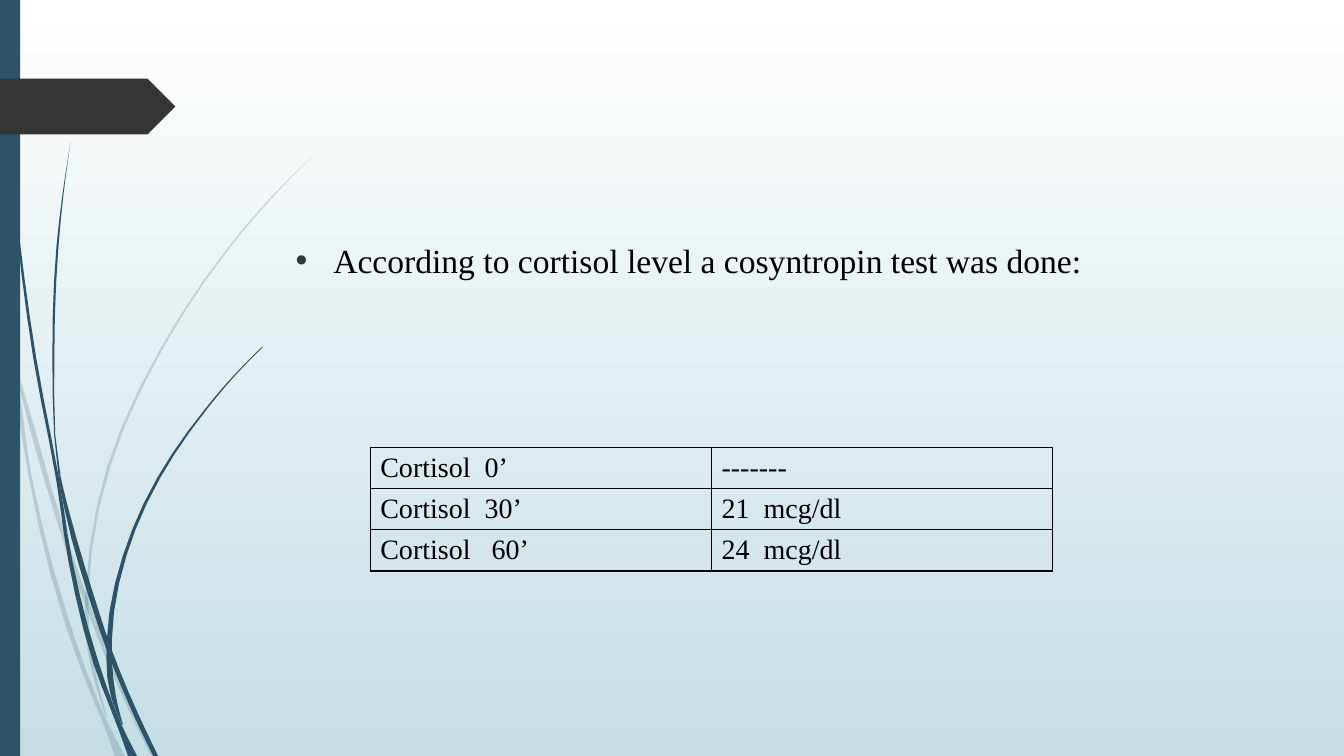
from lxml.etree import SubElement
from pptx import Presentation
from pptx.dml.color import RGBColor
from pptx.enum.shapes import MSO_SHAPE
from pptx.oxml.ns import qn
from pptx.util import Cm, Pt

WHITE = RGBColor(0xFF, 0xFF, 0xFF)
BLACK = RGBColor(0x00, 0x00, 0x00)
PALE_TEAL = RGBColor(0xC5, 0xDE, 0xE5)
DEEP_BLUE = RGBColor(0x2E, 0x53, 0x69)
CHARCOAL = RGBColor(0x35, 0x35, 0x35)
FONT = "Times New Roman"

# Grass blades: rows of (y, left edge, right edge), in units of GRID,
# with the indexes of the rows where a blade is divided into segments
GRID = Cm(0.0254)
CURVE_STEPS = 3
PALE_BLADES = [
    ([(282, 0, 0), (299, 0, 4), (350, 11, 11.5), (376, 17, 20), (522, 58, 62.5),
      (599, 84, 89), (694, 123, 128), (750, 150, 155)], (2, 5)),
    ([(350, 11, 11), (376, 14, 17), (470, 28, 31), (620, 65, 70),
      (693, 92, 96.5), (714, 101, 105.5), (750, 114, 124)], (5,)),
    ([(153, 312, 312), (197, 267.5, 269.5), (244, 227.5, 229.5),
      (348, 158, 160.5), (461, 107, 110), (586, 85, 88), (610, 84, 88),
      (646, 87, 91), (711, 105, 106)], (5, 6)),
]
DARK_BLADES = [
    ([(0, 3, 4), (110, 7, 8), (233, 17, 19), (355, 33, 36), (477, 56, 59),
      (557, 68, 72), (659, 93, 98.5), (722, 117, 122), (750, 127, 136)], (4, 7)),
    ([(141, 70, 70), (193, 62, 63), (245, 56, 58), (349, 52, 54),
      (472, 58, 60), (505, 64, 68), (592, 88, 93.5), (645, 106, 111),
      (708, 132, 137), (750, 152, 157)], (4, 7)),
    ([(344, 260, 261), (374, 230.5, 232), (405, 204, 206), (474, 156, 159),
      (551, 122, 125.5), (635, 106, 111), (691, 110, 115),
      (719, 121, 122)], (5,)),
]

CORTISOL_ROWS = [
    ("Cortisol  0’", "-------"),
    ("Cortisol  30’", "21  mcg/dl"),
    ("Cortisol   60’", "24  mcg/dl"),
]


def paint(shape, color):
    shape.shadow.inherit = False
    shape.fill.solid()
    shape.fill.fore_color.rgb = color
    shape.line.fill.background()


def format_runs(paragraph, size):
    for run in paragraph.runs:
        run.font.name = FONT
        run.font.size = Pt(size)
        run.font.color.rgb = BLACK


def smooth_edge(heights, edge):
    """Cubic curve of (x, y) points through one edge of a blade."""
    gaps = [b - a for a, b in zip(heights, heights[1:])]
    secants = [(b - a) / gap for a, b, gap in zip(edge, edge[1:], gaps)]
    inner = [(g * t + h * s) / (g + h)
             for g, h, s, t in zip(gaps, gaps[1:], secants, secants[1:])]
    slopes = [(3 * secants[0] - inner[0]) / 2, *inner,
              (3 * secants[-1] - inner[-1]) / 2]
    points = []
    for i, gap in enumerate(gaps):
        for step in range(CURVE_STEPS):
            t = step / CURVE_STEPS
            blend = t * t * (3 - 2 * t)
            x = (edge[i] + (edge[i + 1] - edge[i]) * blend
                 + gap * t * (1 - t) * ((1 - t) * slopes[i] - t * slopes[i + 1]))
            points.append((x, heights[i] + gap * t))
    return points + [(edge[-1], heights[-1])]


def add_blade(slide, rows, cuts, left, top, opacity):
    heights, left_edge, right_edge = zip(*rows)
    left_curve = smooth_edge(heights, left_edge)
    right_curve = smooth_edge(heights, right_edge)
    bounds = [0, *cuts, len(rows) - 1]
    for first, last in zip(bounds, bounds[1:]):
        span = slice(first * CURVE_STEPS, last * CURVE_STEPS + 1)
        outline = left_curve[span] + right_curve[span][::-1]
        points = [(left + x * GRID, top + y * GRID) for x, y in outline]
        builder = slide.shapes.build_freeform(*points[0])
        builder.add_line_segments(points[1:])
        segment = builder.convert_to_shape()
        paint(segment, DEEP_BLUE)
        if opacity < 100:
            color = segment.fill._xPr.find(".//" + qn("a:srgbClr"))
            SubElement(color, qn("a:alpha"), val=str(opacity * 1000))


def add_decoration(slide, left, top, height):
    # Grass
    for blades, opacity in ((PALE_BLADES, 20), (DARK_BLADES, 100)):
        for rows, cuts in blades:
            add_blade(slide, rows, cuts, left, top, opacity)
    # Side bar
    bar = slide.shapes.add_shape(MSO_SHAPE.RECTANGLE, left, top, Cm(0.51), height)
    paint(bar, DEEP_BLUE)
    # Arrow tag
    tag = slide.shapes.add_shape(
        MSO_SHAPE.PENTAGON, left, top + Cm(1.98), Cm(4.42), Cm(1.41))
    paint(tag, CHARCOAL)


def add_background(slide):
    fill = slide.background.fill
    fill.gradient()
    fill.gradient_angle = 270
    for stop, color in zip(fill.gradient_stops, (WHITE, PALE_TEAL)):
        stop.color.rgb = color


def add_statement(slide, text, left, top, width, height):
    text_frame = slide.shapes.add_textbox(left, top, width, height).text_frame
    text_frame.word_wrap = True
    paragraph = text_frame.paragraphs[0]
    paragraph.text = text
    paragraph.space_before = Pt(10)
    format_runs(paragraph, 24)
    # Bullet with hanging indent
    properties = paragraph._p.get_or_add_pPr()
    properties.set("marL", str(Cm(0.95)))
    properties.set("indent", str(-Cm(0.95)))
    bullet_color = SubElement(properties, qn("a:buClr"))
    SubElement(bullet_color, qn("a:srgbClr"), val=str(CHARCOAL))
    SubElement(properties, qn("a:buFont"), typeface="Arial")
    SubElement(properties, qn("a:buChar"), char="•")


def add_cell_borders(cell):
    properties = cell._tc.get_or_add_tcPr()
    for side in ("lnL", "lnR", "lnT", "lnB"):
        line = SubElement(properties, qn("a:" + side), w=str(Pt(1)))
        fill = SubElement(line, qn("a:solidFill"))
        SubElement(fill, qn("a:srgbClr"), val=str(BLACK))


def add_cortisol_table(slide, left, top, width, height):
    table = slide.shapes.add_table(
        len(CORTISOL_ROWS), len(CORTISOL_ROWS[0]), left, top, width, height).table
    table.first_row = False
    table.horz_banding = False
    for row_index, row in enumerate(CORTISOL_ROWS):
        for column_index, text in enumerate(row):
            cell = table.cell(row_index, column_index)
            cell.text_frame.text = text
            cell.margin_bottom = Cm(0)
            format_runs(cell.text_frame.paragraphs[0], 20)
            add_cell_borders(cell)
            cell.fill.background()


def main():
    presentation = Presentation()
    presentation.slide_width = Cm(33.87)
    presentation.slide_height = Cm(19.05)
    slide = presentation.slides.add_slide(presentation.slide_layouts[6])
    add_background(slide)
    add_decoration(slide, Cm(0), Cm(0), presentation.slide_height)
    add_statement(
        slide, "According to cortisol level a cosyntropin test was done:",
        Cm(7.2), Cm(5.92), Cm(24.77), Cm(10.49))
    add_cortisol_table(slide, Cm(9.33), Cm(11.27), Cm(17.2), Cm(3.12))
    presentation.save("out.pptx")


if __name__ == "__main__":
    main()
